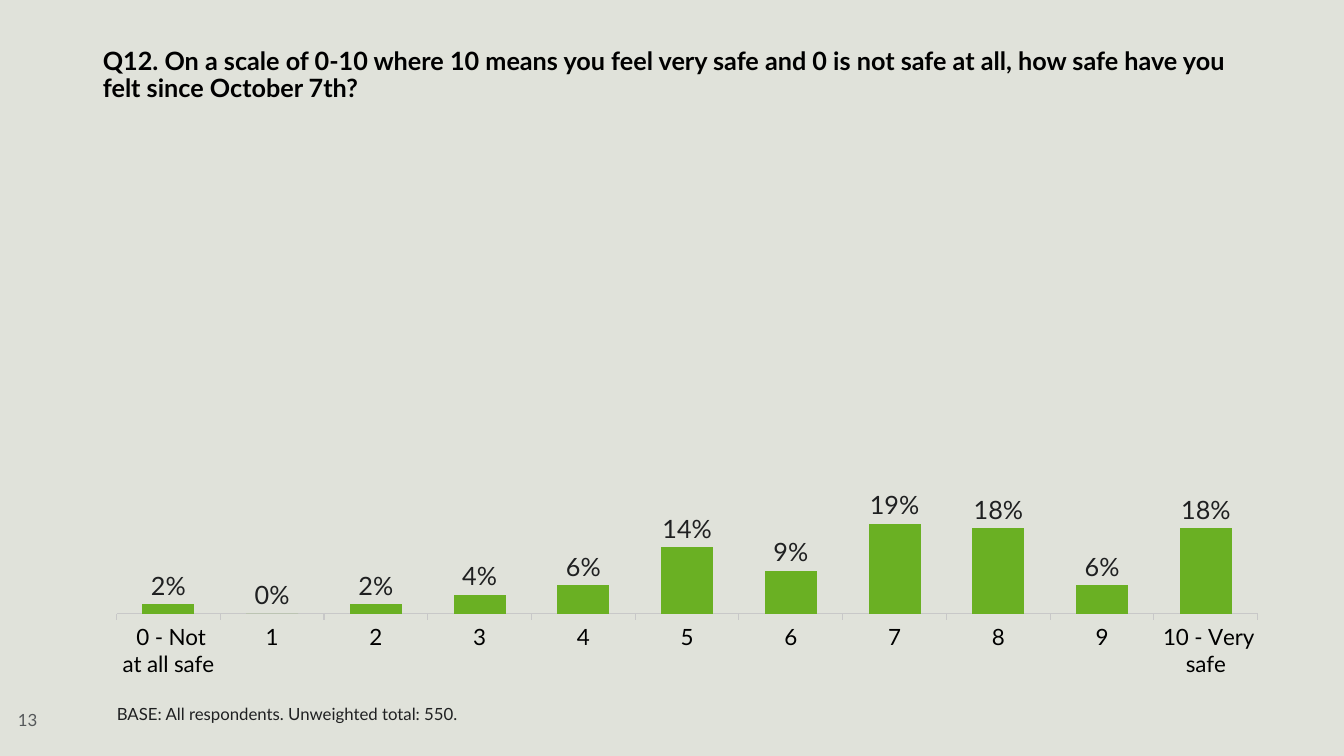
from pptx import Presentation
from pptx.chart.data import CategoryChartData
from pptx.dml.color import RGBColor
from pptx.enum.chart import XL_CHART_TYPE as Kind, XL_LABEL_POSITION as Spot
from pptx.enum.chart import XL_TICK_LABEL_POSITION as Side, XL_TICK_MARK as Tick
from pptx.enum.text import MSO_ANCHOR as Anchor, MSO_AUTO_SIZE as Fit, PP_ALIGN as Align
from pptx.util import Inches, Pt

FONT = "Lato"
BLACK = RGBColor(0x00, 0x00, 0x00)
DARK = RGBColor(0x1F, 0x20, 0x21)
GRAY = RGBColor(0x55, 0x58, 0x5A)
RULE = RGBColor(0xC8, 0xC8, 0xC8)
GREEN = RGBColor(0x6A, 0xB0, 0x23)
PAPER = RGBColor(0xE0, 0xE2, 0xDA)


def style(font, size, color, bold=False):
    font.name, font.size, font.bold = FONT, Pt(size), bold
    font.color.rgb = color


def write(shape, text, box, size=12, color=DARK, bold=False, space=0.9, after=0, hang=None):
    """Place the shape and fill it; hang is the left margin and first-line indent."""
    shape.left, shape.top, shape.width, shape.height = map(Inches, box)
    frame = shape.text_frame
    frame.word_wrap = True
    frame.auto_size = Fit.NONE
    frame.vertical_anchor = Anchor.MIDDLE
    para = frame.paragraphs[0]
    para.alignment = Align.LEFT
    para.line_spacing = space
    para.space_before, para.space_after = Pt(0), Pt(after)
    if hang:
        props = para._p.get_or_add_pPr()
        props.set("marL", str(Inches(hang[0])))
        props.set("indent", str(Inches(hang[1])))
    run = para.add_run()
    run.text = text
    style(run.font, size, color, bold)


deck = Presentation()
deck.slide_width, deck.slide_height = Inches(13.33), Inches(7.5)
slide = deck.slides.add_slide(deck.slide_layouts[5])
slide.background.fill.solid()
slide.background.fill.fore_color.rgb = PAPER

write(slide.shapes.title,
      "Q12. On a scale of 0-10 where 10 means you feel very safe and 0 is not safe at all, "
      "how safe have you felt since October 7th?",
      (0.92, 0.4, 11.5, 0.71), size=18, color=BLACK, bold=True, after=12.8)

# Scores run from 10 down to 0; the reversed axis shows 0 on the left
data = CategoryChartData(number_format="0%")
data.categories = [" 10 - Very safe", *[str(n) for n in range(9, 0, -1)], " 0 - Not at all safe"]
data.add_series("Series 1", [0.18, 0.06, 0.18, 0.19, 0.09, 0.14, 0.06, 0.04, 0.02, 0, 0.02])
chart = slide.shapes.add_chart(
    Kind.COLUMN_CLUSTERED, Inches(0.92), Inches(1.27), Inches(11.79), Inches(5.55), data).chart
style(chart.font, 18, DARK)
chart.has_legend = False
chart.has_title = False

scale = chart.category_axis
scale.reverse_order = True
scale.has_major_gridlines = False
scale.major_tick_mark = Tick.OUTSIDE
scale.tick_label_position = Side.LOW
scale.format.line.color.rgb = RULE
scale.format.line.width = Pt(0.75)
style(scale.tick_labels.font, 16, BLACK)

share = chart.value_axis
share.minimum_scale, share.maximum_scale = 0, 1
share.has_major_gridlines = False
share.visible = False

plot = chart.plots[0]
plot.gap_width = 100
plot.vary_by_categories = False
bars = plot.series[0].format
bars.fill.solid()
bars.fill.fore_color.rgb = GREEN
plot.has_data_labels = True
labels = plot.data_labels
labels.show_value = True
labels.position = Spot.OUTSIDE_END
labels.number_format, labels.number_format_is_linked = "0%", False
style(labels.font, 18, DARK)

for text, box, look in (
    ("13", (0.08, 6.95, 0.61, 0.4), {"color": GRAY}),
    ("BASE: All respondents. Unweighted total: 550.", (0.81, 6.9, 10.41, 0.4),
     {"space": 0.8, "hang": (0.5, -0.25)}),
):
    write(slide.shapes.add_textbox(0, 0, 0, 0), text, box, **look)

deck.save("out.pptx")
